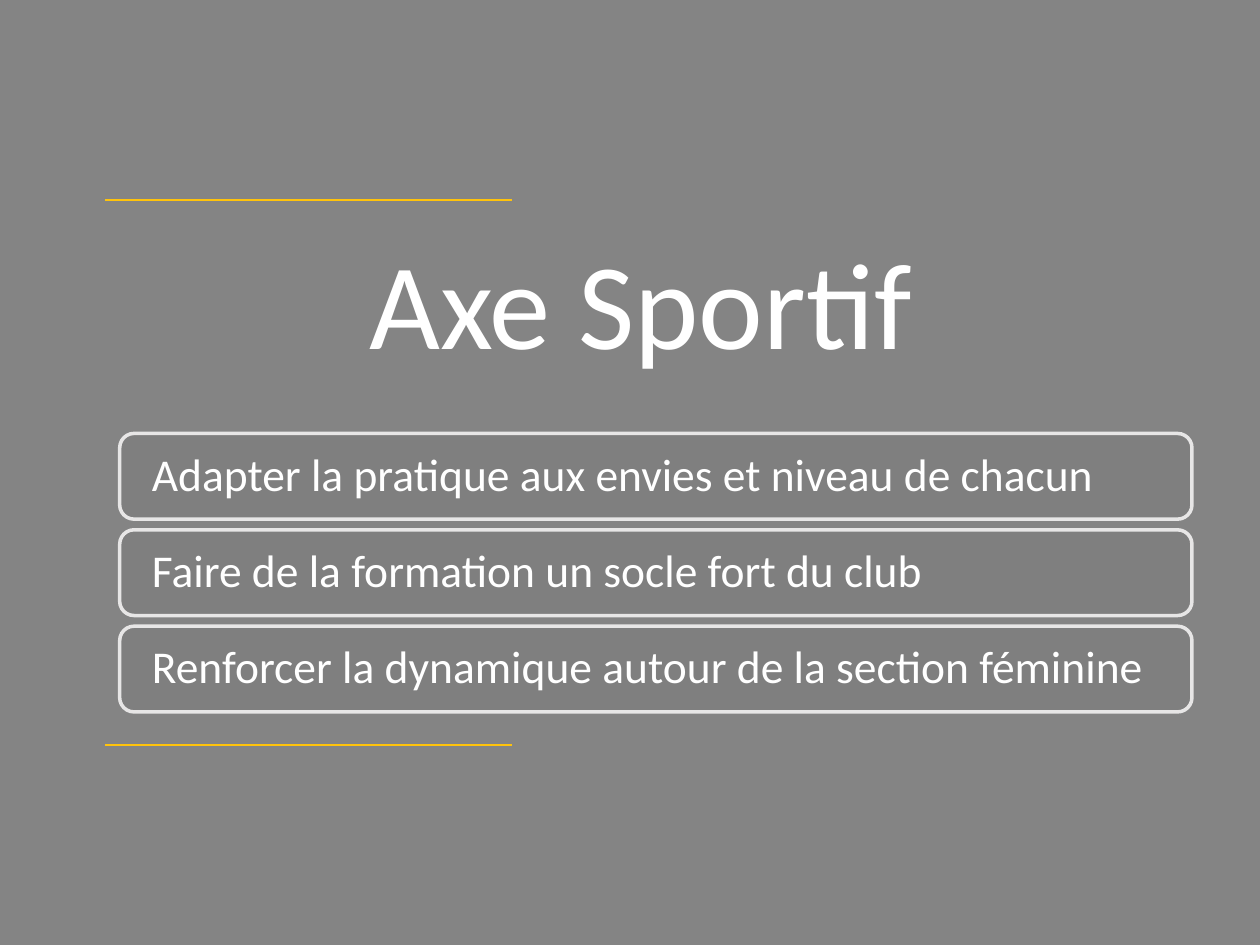
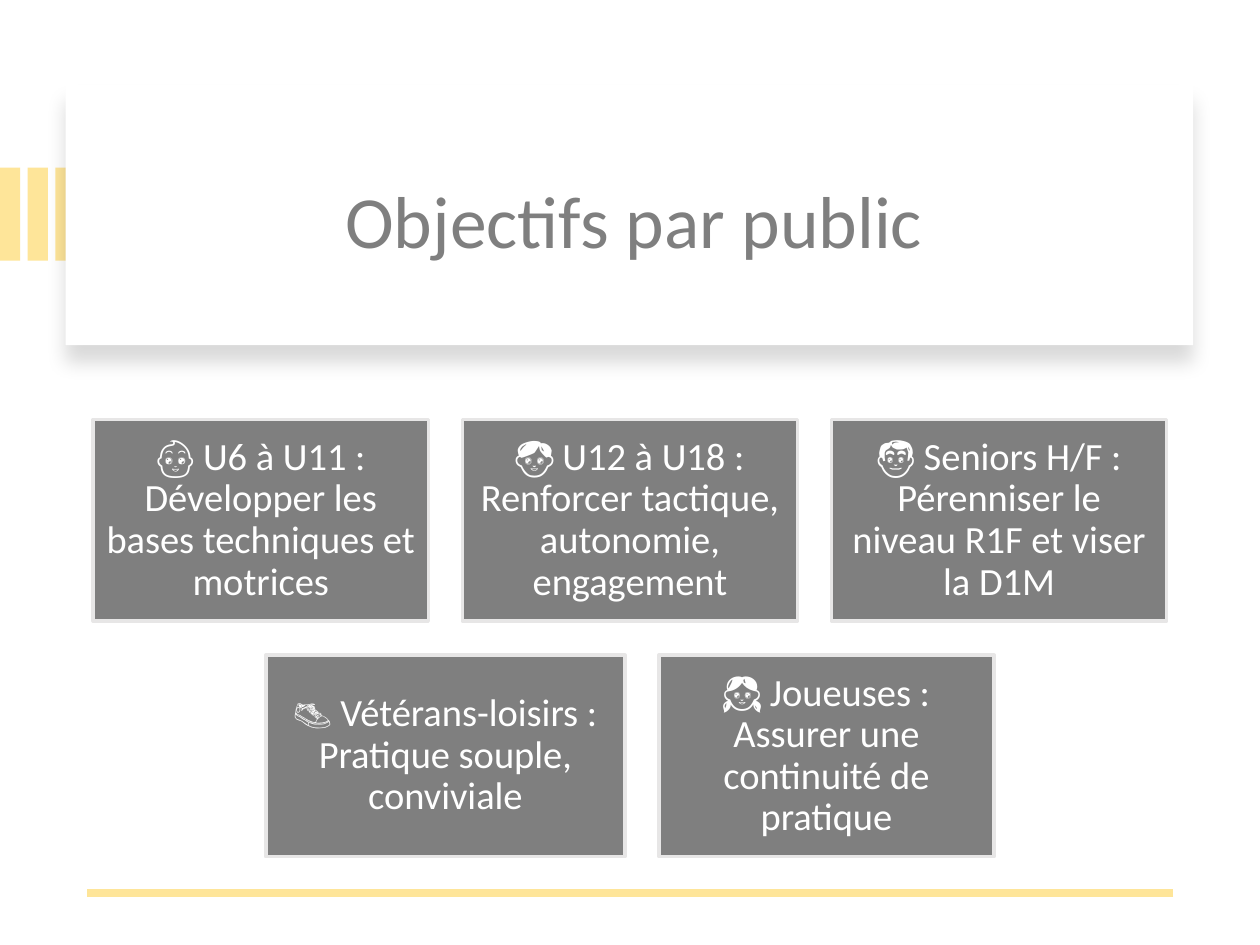
from dataclasses import dataclass

import lxml.etree
import pptx
import pptx.dml.color
import pptx.enum.shapes
import pptx.enum.text
import pptx.oxml.ns
import pptx.util

Inches, Pt = pptx.util.Inches, pptx.util.Pt
RGBColor = pptx.dml.color.RGBColor
SHAPE = pptx.enum.shapes.MSO_SHAPE
ALIGN = pptx.enum.text.PP_ALIGN
qn = pptx.oxml.ns.qn

WHITE = RGBColor(0xFF, 0xFF, 0xFF)
BACKDROP = RGBColor(0x84, 0x84, 0x84)
GREY = RGBColor(0x7F, 0x7F, 0x7F)
EDGE = RGBColor(0xE7, 0xE6, 0xE6)
GOLD = RGBColor(0xFF, 0xC3, 0x0B)
PALE_GOLD = RGBColor(0xFE, 0xE5, 0x99)
FONT = "Calibri"
SLIDE_W, SLIDE_H = 10, 7.5
TITLE_ONLY = 5


@dataclass
class Box:
    left: float
    top: float
    width: float
    height: float

    def lengths(self):
        return [Inches(v) for v in (self.left, self.top, self.width, self.height)]


@dataclass
class CardStyle:
    shape: int
    size: int
    align: int
    inset: float


@dataclass
class Audience:
    text: str
    width: float = 2.66


AXIS_STYLE = CardStyle(SHAPE.ROUNDED_RECTANGLE, 26, ALIGN.LEFT, 0.14)
AUDIENCE_STYLE = CardStyle(SHAPE.RECTANGLE, 22, ALIGN.CENTER, 0.09)

AXES = [
    " Adapter la pratique aux envies et niveau de chacun",
    " Faire de la formation un socle fort du club",
    " Renforcer la dynamique autour de la section féminine",
]
AUDIENCE_ROWS = [
    [
        Audience("👶 U6 à U11 : Développer les bases techniques et motrices"),
        Audience("👦 U12 à U18 : Renforcer tactique, autonomie, engagement"),
        Audience("👨 Seniors H/F : Pérenniser le niveau R1F et viser la D1M"),
    ],
    [
        Audience("👟 Vétérans-loisirs : Pratique souple, conviviale", 2.85),
        Audience("👧 Joueuses : Assurer une continuité de pratique"),
    ],
]


def write(sp, text: str, size: int, color: RGBColor, align: int):
    tf = sp.text_frame
    tf.text = text
    tf.word_wrap = True
    tf.auto_size = pptx.enum.text.MSO_AUTO_SIZE.NONE
    tf.vertical_anchor = pptx.enum.text.MSO_ANCHOR.MIDDLE
    p = tf.paragraphs[0]
    p.alignment = align
    font = p.runs[0].font
    font.name, font.size, font.color.rgb = FONT, Pt(size), color
    return tf


def add_title(s, text: str, box: Box, size: int, color: RGBColor) -> None:
    """Fill the title placeholder and bring it in front of what is drawn so far."""
    title = s.shapes.title
    title.left, title.top, title.width, title.height = box.lengths()
    write(title, text, size, color, ALIGN.CENTER)
    s.shapes.element.append(title.element)


def add_block(s, shape: int, box: Box, fill: RGBColor):
    sp = s.shapes.add_shape(shape, *box.lengths())
    sp.shadow.inherit = False
    sp.fill.solid()
    sp.fill.fore_color.rgb = fill
    sp.line.fill.background()
    return sp


def add_card(s, text: str, box: Box, style: CardStyle) -> None:
    sp = add_block(s, style.shape, box, GREY)
    sp.line.color.rgb = EDGE
    sp.line.width = Pt(2)
    tf = write(sp, text, style.size, WHITE, style.align)
    tf.margin_left = tf.margin_right = Inches(style.inset)
    tf.margin_top = tf.margin_bottom = Inches(style.inset)
    tf.paragraphs[0].line_spacing = 0.9


def add_rule(s, left: float, right: float, y: float, color: RGBColor, width: float) -> None:
    rule = s.shapes.add_connector(
        pptx.enum.shapes.MSO_CONNECTOR.STRAIGHT,
        Inches(right), Inches(y), Inches(left), Inches(y))
    rule.line.color.rgb = color
    rule.line.width = Pt(width)
    lxml.etree.SubElement(rule.element.spPr, qn("a:effectLst"))


def add_soft_shadow(sp) -> None:
    effects = sp.element.spPr.find(qn("a:effectLst"))
    shadow = lxml.etree.SubElement(
        effects, qn("a:outerShdw"), blurRad=str(Pt(11)), dist=str(Pt(10)),
        dir="5400000", algn="t", rotWithShape="0")
    color = lxml.etree.SubElement(shadow, qn("a:srgbClr"), val="000000")
    lxml.etree.SubElement(color, qn("a:alpha"), val="15000")


def build_axis_slide(prs) -> None:
    s = prs.slides.add_slide(prs.slide_layouts[TITLE_ONLY])
    add_block(s, SHAPE.RECTANGLE, Box(0, 0, SLIDE_W, SLIDE_H), BACKDROP)
    add_title(s, "Axe Sportif", Box(0.83, 1.59, 8.51, 1.59), 70, WHITE)
    for y in (1.59, 5.91):
        add_rule(s, 0.83, 4.06, y, GOLD, 1)
    first_top, last_top = 3.44, 4.97
    pitch = (last_top - first_top) / (len(AXES) - 1)
    for i, text in enumerate(AXES):
        add_card(s, text, Box(0.95, first_top + i * pitch, 8.51, 0.68), AXIS_STYLE)


def build_audience_slide(prs) -> None:
    s = prs.slides.add_slide(prs.slide_layouts[TITLE_ONLY])
    for i in range(3):
        add_block(s, SHAPE.RECTANGLE, Box(i * 0.22, 1.33, 0.16, 0.74), PALE_GOLD)
    panel = add_block(s, SHAPE.RECTANGLE, Box(0.52, 0.67, 8.95, 2.07), WHITE)
    add_soft_shadow(panel)
    add_title(s, "Objectifs par public", Box(0.86, 0.89, 8.34, 1.7), 42, GREY)
    add_rule(s, 0.69, 9.31, 7.09, PALE_GOLD, 4.5)

    gap, height, top = 0.27, 1.6, 3.33
    for row in AUDIENCE_ROWS:
        row_width = sum(a.width for a in row) + gap * (len(row) - 1)
        left = (SLIDE_W - row_width) / 2
        for audience in row:
            add_card(s, audience.text, Box(left, top, audience.width, height), AUDIENCE_STYLE)
            left += audience.width + gap
        top += height + gap


def main() -> None:
    prs = pptx.Presentation()
    prs.slide_width, prs.slide_height = Inches(SLIDE_W), Inches(SLIDE_H)
    build_axis_slide(prs)
    build_audience_slide(prs)
    prs.save("out.pptx")


if __name__ == "__main__":
    main()
